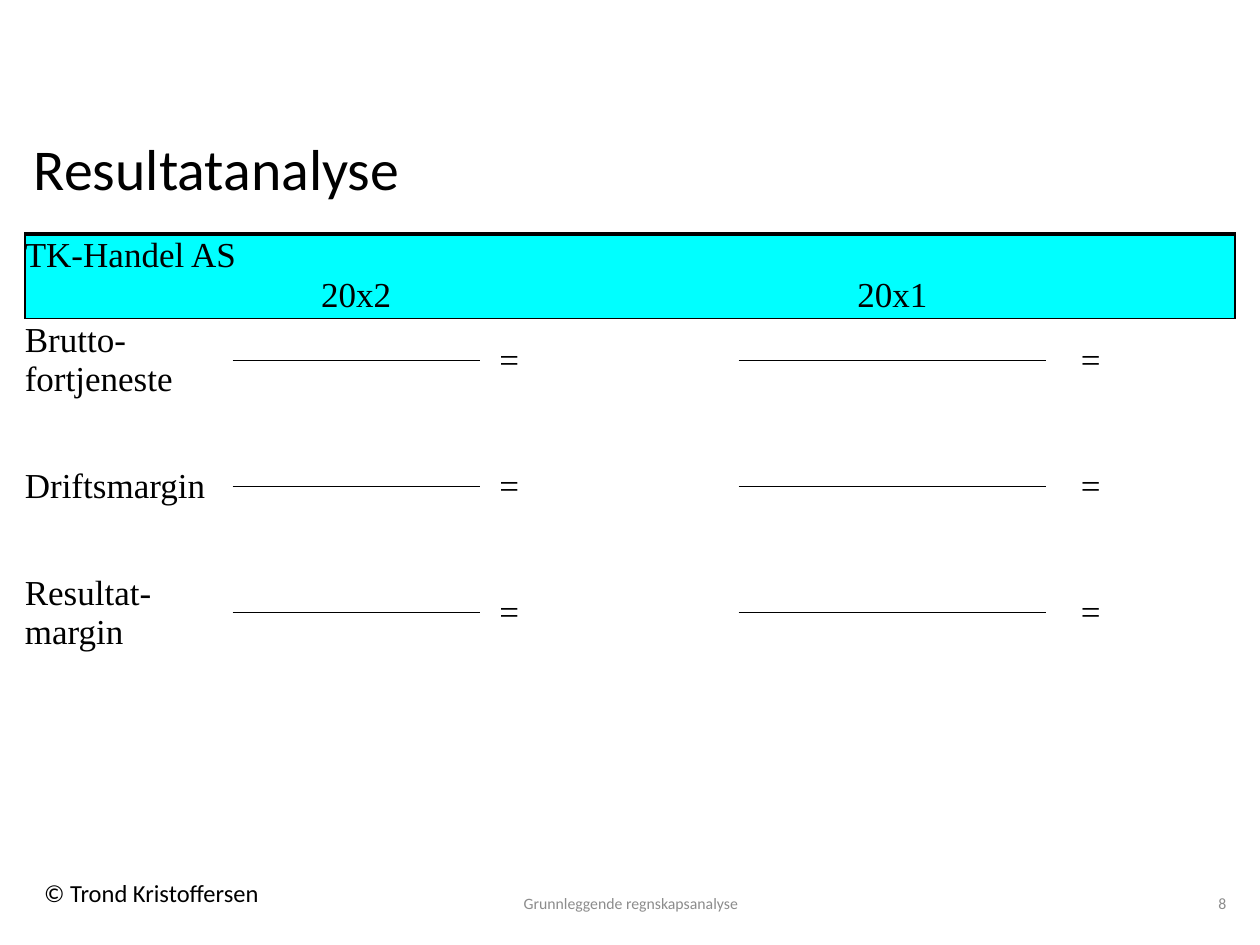
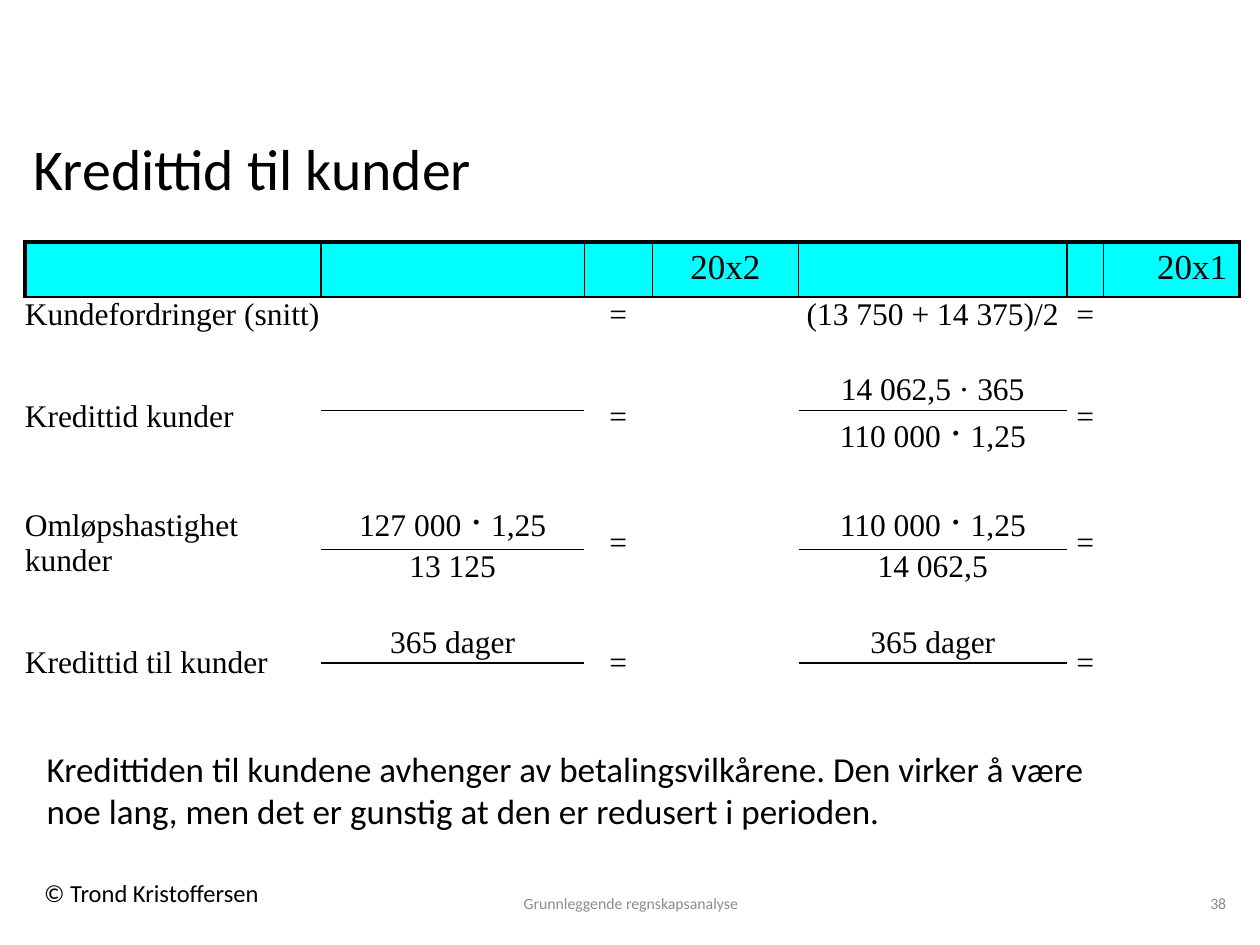
from dataclasses import dataclass

from pptx import Presentation
from pptx import util as u
from pptx.dml.color import RGBColor
from pptx.enum import text
from pptx.oxml import ns, xmlchemy

BLACK = RGBColor(0x00, 0x00, 0x00)
GREY = RGBColor(0x8C, 0x8C, 0x8C)
CYAN = RGBColor(0x00, 0xFF, 0xFF)
SANS, SERIF = "Calibri", "Times New Roman"
LEFT, CENTER, RIGHT = text.PP_ALIGN.LEFT, text.PP_ALIGN.CENTER, text.PP_ALIGN.RIGHT
TOP, MIDDLE = text.MSO_ANCHOR.TOP, text.MSO_ANCHOR.MIDDLE
SIDES = {"L": (0, -1), "R": (0, 1), "T": (-1, 0), "B": (1, 0)}
OPPOSITE = {"L": "R", "R": "L", "T": "B", "B": "T"}
THICK, THIN = 2.25, 1


@dataclass
class Box:
    """Rectangle measured in centimetres."""
    left: float
    top: float
    width: float
    height: float

    def lengths(self):
        """Return the four measures as slide lengths."""
        return [u.Cm(value) for value in (self.left, self.top, self.width, self.height)]


TITLE_BOX = Box(0.43, 2.29, 24.56, 2.36)
COPYRIGHT_BOX = Box(0.64, 17.58, 4.95, 0.84)
FOOTER_BOX = Box(8.69, 17.58, 8.05, 1.27)
NUMBER_BOX = Box(19.69, 17.58, 5.28, 1.27)


def add_span(para, words, size, font=SANS, color=BLACK):
    """Append one formatted run to a paragraph."""
    span = para.add_run()
    span.text = words
    span.font.size = u.Pt(size)
    span.font.name = font
    span.font.color.rgb = color


def add_label(page, box, words, size, color=BLACK, align=LEFT, anchor=TOP, wrap=True):
    """Place a text box with one paragraph."""
    frame = page.shapes.add_textbox(*box.lengths()).text_frame
    frame.word_wrap = wrap
    frame.vertical_anchor = anchor
    para = frame.paragraphs[0]
    para.alignment = align
    add_span(para, words, size, color=color)


def add_page(deck, title, number):
    """Add a page with its title and the shared footer."""
    page = deck.slides.add_slide(deck.slide_layouts[5])
    holder = page.shapes.title
    holder.left, holder.top, holder.width, holder.height = TITLE_BOX.lengths()
    frame = holder.text_frame
    frame.auto_size = text.MSO_AUTO_SIZE.NONE
    frame.vertical_anchor = MIDDLE
    para = frame.paragraphs[0]
    para.alignment = LEFT
    para.line_spacing = 0.9
    add_span(para, title, 33)
    add_label(page, COPYRIGHT_BOX, "© Trond Kristoffersen", 14, wrap=False)
    add_label(page, FOOTER_BOX, "Grunnleggende regnskapsanalyse", 9, GREY, CENTER, MIDDLE)
    add_label(page, NUMBER_BOX, str(number), 9, GREY, RIGHT, MIDDLE)
    return page


def set_line(cell, side, points=None):
    """Draw one edge of a cell, or hide it when no width is given."""
    props = cell._tc.get_or_add_tcPr()
    line = props.find(ns.qn(f"a:ln{side}"))
    if line is None:
        line = xmlchemy.OxmlElement(f"a:ln{side}")
        props.insert(list(SIDES).index(side), line)
    for child in list(line):
        line.remove(child)
    if points is None:
        line.append(xmlchemy.OxmlElement("a:noFill"))
        return
    line.set("w", str(int(u.Pt(points))))
    fill = xmlchemy.OxmlElement("a:solidFill")
    color = xmlchemy.OxmlElement("a:srgbClr")
    color.set("val", str(BLACK))
    fill.append(color)
    line.append(fill)


def draw_edge(table, row, col, side, points):
    """Draw an edge on a cell and on the neighbour that shares it."""
    set_line(table.cell(row, col), side, points)
    down, across = SIDES[side]
    row, col = row + down, col + across
    if 0 <= row < len(table.rows) and 0 <= col < len(table.columns):
        set_line(table.cell(row, col), OPPOSITE[side], points)


def add_grid(page, box, widths, heights, header_rows, size):
    """Add a plain table with a coloured header and a thick top edge."""
    table = page.shapes.add_table(len(heights), len(widths), *box.lengths()).table
    table.first_row = table.horz_banding = False
    for column, width in zip(table.columns, widths):
        column.width = u.Cm(width)
    for row, (line, height) in enumerate(zip(table.rows, heights)):
        line.height = u.Cm(height)
        for cell in line.cells:
            cell.margin_left = cell.margin_right = cell.margin_top = cell.margin_bottom = 0
            if row < header_rows:
                cell.fill.solid()
                cell.fill.fore_color.rgb = CYAN
            else:
                cell.fill.background()
            for side in SIDES:
                set_line(cell, side)
            mark = xmlchemy.OxmlElement("a:endParaRPr")
            mark.set("sz", str(size * 100))
            cell.text_frame.paragraphs[0]._p.append(mark)
    for col in range(len(widths)):
        draw_edge(table, 0, col, "T", THICK)
        draw_edge(table, header_rows - 1, col, "B", THIN)
    return table


def write_cell(table, row, col, words, size, align=CENTER, anchor=TOP):
    """Write a cell, with a larger sign where a product is marked by *."""
    cell = table.cell(row, col)
    cell.vertical_anchor = anchor
    para = cell.text_frame.paragraphs[0]
    para.alignment = align
    for index, part in enumerate(words.split("*")):
        if index:
            add_span(para, "·", 24, SERIF)
        add_span(para, part, size, SERIF)


def add_ratio(table, row, name, size, equals_cols, bar_cols, merged_cols):
    """Lay out a ratio over two rows with fraction bars and equals signs."""
    for first, last in merged_cols:
        table.cell(row, first).merge(table.cell(row + 1, last))
    write_cell(table, row, 0, name, size, LEFT, MIDDLE)
    for col in equals_cols:
        write_cell(table, row, col, "=", size, anchor=MIDDLE)
    for col in bar_cols:
        draw_edge(table, row, col, "B", THIN)


def add_result_table(page, box):
    """Add the table of profit ratios."""
    widths = [4.19, 4.98, 1.19, 2.74, 0.58, 0.71, 6.2, 1.8, 2.01]
    size = 20
    table = add_grid(page, box, widths, [0.78] * 10, 2, size)
    for row in (0, 1):
        draw_edge(table, row, 0, "L", THIN)
        draw_edge(table, row, len(widths) - 1, "R", THIN)
        table.cell(row, 4).merge(table.cell(row, 5))
    table.cell(0, 0).merge(table.cell(0, 1))
    write_cell(table, 0, 0, "TK-Handel AS", size, LEFT, MIDDLE)
    for col, year in ((1, "20x2"), (6, "20x1")):
        write_cell(table, 1, col, year, size)
    for row in (4, 7):
        table.cell(row, 3).merge(table.cell(row, 4))
    merged = [(0, 0), (2, 2), (3, 4), (5, 5), (7, 7), (8, 8)]
    for index, name in enumerate(("Brutto-fortjeneste", "Driftsmargin", "Resultat-margin")):
        add_ratio(table, 2 + 3 * index, name, size, (2, 7), (1, 6), merged)


def add_credit_table(page, box):
    """Add the table of customer credit ratios."""
    widths = [5.97, 5.31, 1.37, 2.95, 5.41, 0.74, 2.74]
    heights = [1.04, 0.7, 0.7, 0.7, 0.94, 0.7, 0.94, 0.76, 0.7, 0.7, 0.7]
    size = 18
    table = add_grid(page, box, widths, heights, 1, size)
    last = len(widths) - 1
    draw_edge(table, 0, 0, "L", THICK)
    for col in range(last + 1):
        draw_edge(table, 0, col, "R", THICK if col == last else THIN)
        cell = table.cell(0, col)
        cell.margin_left = cell.margin_right = u.Cm(0.25)
        cell.margin_top = cell.margin_bottom = u.Cm(0.13)
    write_cell(table, 0, 3, "20x2", 20)
    write_cell(table, 0, last, "20x1", 20, RIGHT)
    write_cell(table, 1, 0, "Kundefordringer (snitt)", size, LEFT)
    for col, words in ((2, "="), (4, "(13 750 + 14 375)/2"), (5, "=")):
        write_cell(table, 1, col, words, size)
    merged = [(col, col) for col in (0, 2, 3, 5, 6)]
    names = ("Kredittid kunder", "Omløpshastighet kunder", "Kredittid til kunder")
    for index, name in enumerate(names):
        add_ratio(table, 3 + 3 * index, name, size, (2, 5), (1, 4), merged)
    terms = {
        (3, 4): "14 062,5 · 365", (4, 4): "110 000 * 1,25",
        (6, 1): "127 000 * 1,25", (7, 1): "13 125",
        (6, 4): "110 000 * 1,25", (7, 4): "14 062,5",
        (9, 1): "365 dager", (9, 4): "365 dager",
    }
    for (row, col), words in terms.items():
        write_cell(table, row, col, words, size)


def main():
    """Build and save the deck."""
    deck = Presentation()
    deck.slide_width, deck.slide_height = u.Cm(25.4), u.Cm(19.05)
    page = add_page(deck, "Resultatanalyse", 8)
    add_result_table(page, Box(0.5, 4.72, 24.4, 7.8))
    page = add_page(deck, "Kredittid til kunder", 38)
    add_credit_table(page, Box(0.5, 4.88, 24.49, 8.58))
    add_label(page, Box(0.69, 14.94, 22.66, 1.96),
              "Kredittiden til kundene avhenger av betalingsvilkårene. Den virker å være "
              "noe lang, men det er gunstig at den er redusert i perioden.", 20)
    deck.save("out.pptx")


if __name__ == "__main__":
    main()
